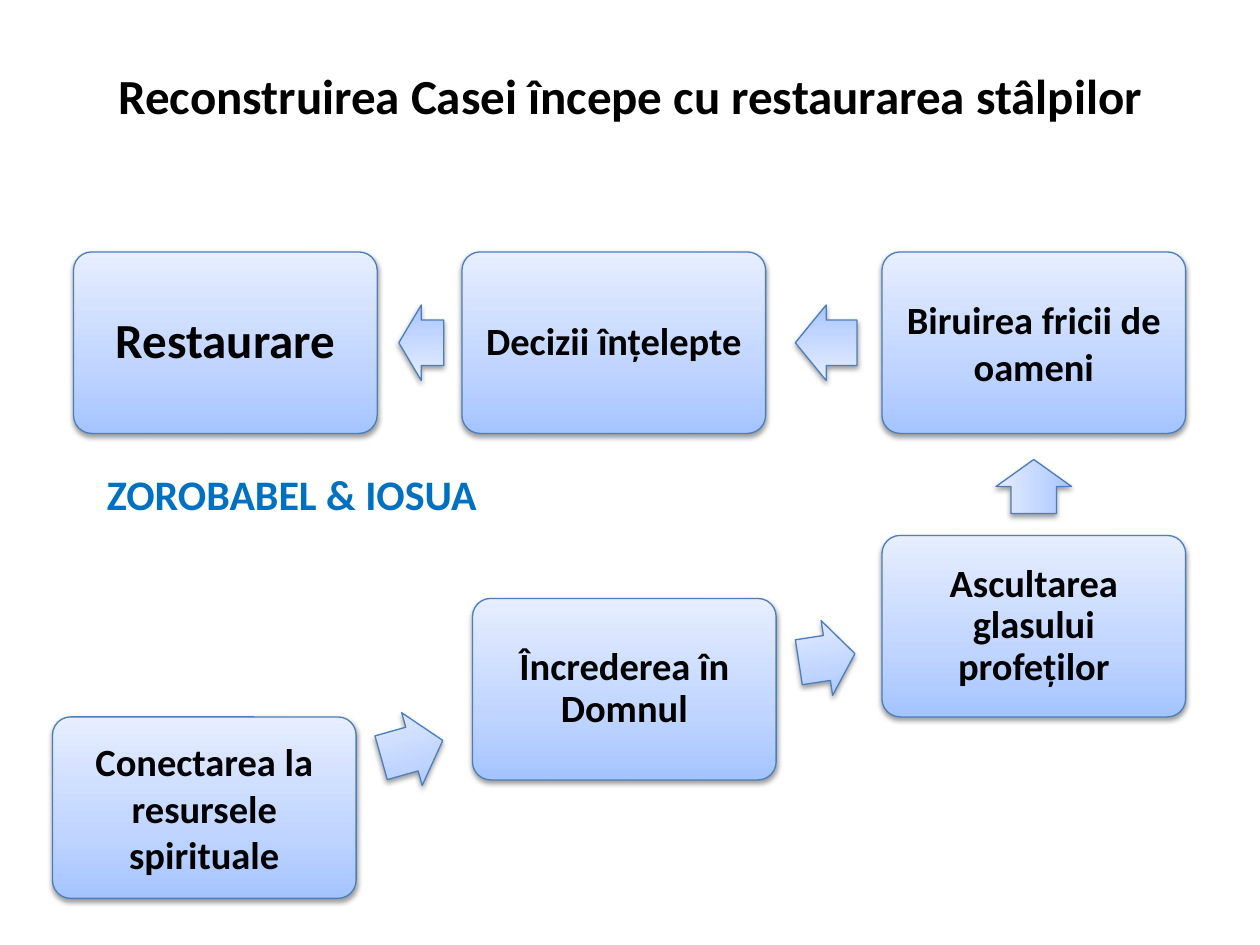
from dataclasses import dataclass
from math import atan2, cos, degrees, hypot, sin

from lxml import etree
from pptx import Presentation
from pptx.dml.color import RGBColor
from pptx.enum.shapes import MSO_SHAPE
from pptx.enum.text import MSO_ANCHOR, PP_ALIGN
from pptx.oxml.ns import qn
from pptx.util import Inches, Pt

ROUND = MSO_SHAPE.ROUNDED_RECTANGLE
ARROW = MSO_SHAPE.RIGHT_ARROW
MIDDLE = MSO_ANCHOR.MIDDLE
LEFT, CENTER = PP_ALIGN.LEFT, PP_ALIGN.CENTER

# The slide is a grid of 120 columns and 90 rows.
COLS, ROWS = 120, 90
CELL = Inches(10) // COLS
BOX_W, BOX_H = 28.92, 17.28
ARROW_H = 7.2


@dataclass(frozen=True)
class Theme:
    font: str = "Calibri"
    ink: str = "000000"
    accent: str = "0070C0"
    edge: str = "4B7EBC"
    stops: tuple = ((0, "A4C4FF"), (35, "BFD4FF"), (100, "E6EEFF"))
    large: int = 28
    label: int = 24
    body: int = 22


THEME = Theme()

# Column, row, text, type size, line spacing, inset in inches
STEPS = [
    (5, 68.28, "Conectarea la resursele spirituale", THEME.body, 1, 0.09),
    (45, 57, "Încrederea în Domnul", THEME.body, 0.9, 0.09),
    (84, 51, "Ascultarea glasului profeților", THEME.body, 0.9, 0.09),
    (84, 24, "Biruirea fricii de oameni", THEME.body, 1, 0.09),
    (44, 24, "Decizii înțelepte", THEME.body, 0.9, 0.09),
    (7, 24, "Restaurare", THEME.large, 0.9, 0.12),
]


def grid(*cells):
    return [round(c * CELL) for c in cells]


def write(frame, text, size, color=THEME.ink, align=CENTER, space=None):
    frame.text = text
    frame.word_wrap = True
    para = frame.paragraphs[0]
    para.alignment = align
    para.line_spacing = space
    font = para.runs[0].font
    font.name, font.size, font.bold = THEME.font, Pt(size), True
    font.color.rgb = RGBColor.from_string(color)


def add(parent, tag, **attrs):
    node = etree.SubElement(parent, qn(tag))
    for key, val in attrs.items():
        node.set(key, str(val))
    return node


def paint(shape):
    """Give a shape the three-stop gradient, thin edge and soft shadow."""
    shape.fill.gradient()
    shape.fill.gradient_angle = 90
    shape.line.color.rgb = RGBColor.from_string(THEME.edge)
    shape.line.width = Pt(0.75)
    shape.shadow.inherit = False
    props = shape._element.spPr

    stops = props.find(qn("a:gradFill")).find(qn("a:gsLst"))
    for old in list(stops):
        stops.remove(old)
    for share, color in THEME.stops:
        stop = add(stops, "a:gs", pos=share * 1000)
        add(stop, "a:srgbClr", val=color)

    shade = add(props.find(qn("a:effectLst")), "a:outerShdw",
                blurRad=Pt(3.1), dist=Pt(1.6), dir=5400000, rotWithShape=0)
    black = add(shade, "a:srgbClr", val="000000")
    add(black, "a:alpha", val=38000)


def add_box(slide, col, row, text, size, space, inset):
    box = slide.shapes.add_shape(ROUND, *grid(col, row, BOX_W, BOX_H))
    box.adjustments[0] = 0.1
    paint(box)
    frame = box.text_frame
    frame.vertical_anchor = MIDDLE
    frame.margin_left = frame.margin_right = Inches(inset)
    frame.margin_top = frame.margin_bottom = Inches(inset)
    write(frame, text, size, space=space)


def add_arrow(slide, start, end):
    """Point from one box to the next, filling 53% of the gap between them."""
    dx, dy = end[0] - start[0], end[1] - start[1]
    angle = atan2(dy, dx)
    reach = max(abs(dx) / BOX_W, abs(dy) / BOX_H)
    gap = hypot(dx, dy) * (1 - 1 / reach)
    width, back = 0.53 * gap, 0.02 * gap
    x = start[0] + (dx + BOX_W - width) / 2 - back * cos(angle)
    y = start[1] + (dy + BOX_H - ARROW_H) / 2 - back * sin(angle)
    arrow = slide.shapes.add_shape(ARROW, *grid(x, y, width, ARROW_H))
    arrow.adjustments[0], arrow.adjustments[1] = 0.6, 0.5
    arrow.rotation = degrees(angle) % 360
    paint(arrow)


def add_title(slide, text):
    title = slide.shapes.title
    title.left, title.top, title.width, title.height = grid(6, 3, 108, 12)
    title.text_frame.vertical_anchor = MIDDLE
    write(title.text_frame, text, THEME.large)


def add_label(slide, text):
    label = slide.shapes.add_textbox(*grid(9, 44, 43, 6))
    write(label.text_frame, text, THEME.label, THEME.accent, LEFT)


def main():
    deck = Presentation()
    deck.slide_width, deck.slide_height = grid(COLS, ROWS)
    slide = deck.slides.add_slide(deck.slide_layouts[5])
    add_title(slide, "Reconstruirea Casei începe cu restaurarea stâlpilor")
    for step in STEPS:
        add_box(slide, *step)
    for start, end in zip(STEPS, STEPS[1:]):
        add_arrow(slide, start, end)
    add_label(slide, "ZOROBABEL & IOSUA")
    deck.save("out.pptx")


if __name__ == "__main__":
    main()
